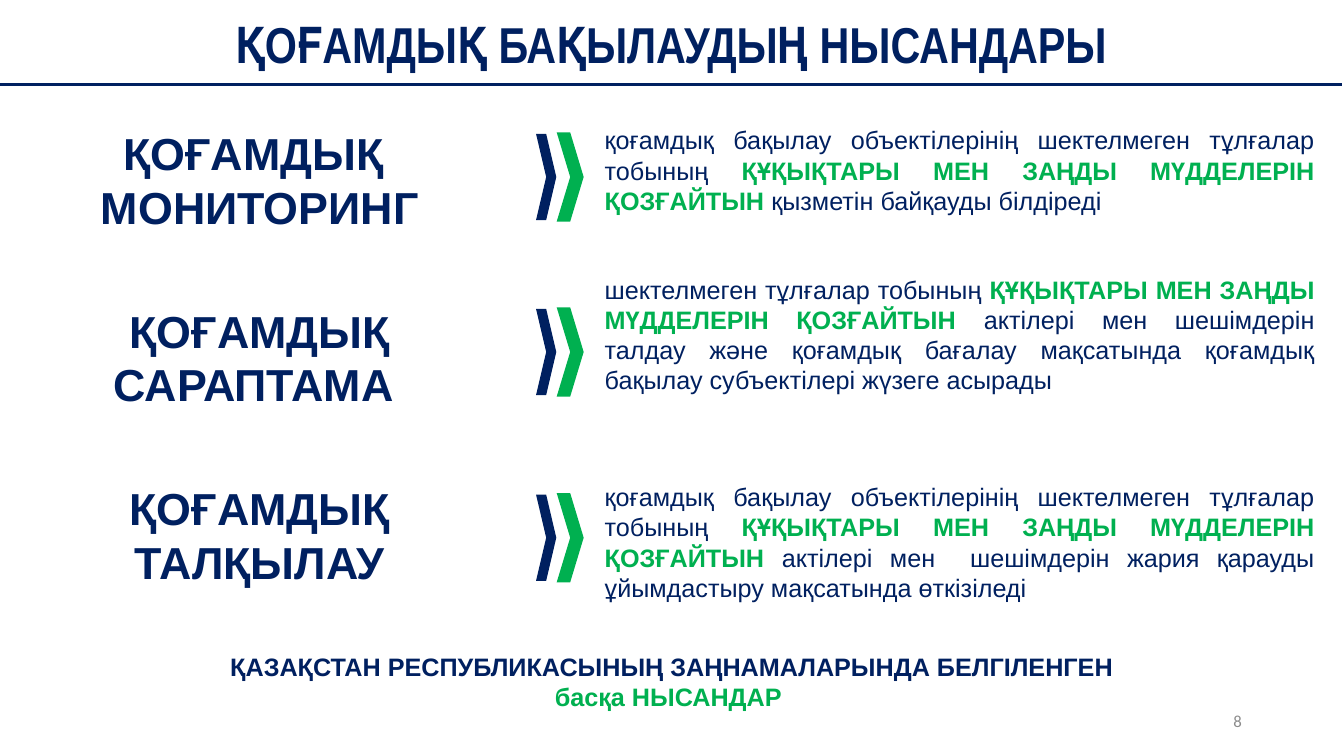
from dataclasses import dataclass

import pptx
import pptx.dml.color
import pptx.enum.shapes
import pptx.enum.text
import pptx.oxml
import pptx.util
from pptx.util import Cm

ALIGN = pptx.enum.text.PP_ALIGN
ANCHOR = pptx.enum.text.MSO_ANCHOR


@dataclass(frozen=True)
class Theme:
    navy: str = "002060"
    green: str = "00B050"
    grey: str = "8C8C8C"
    heading_font: str = "Arial Narrow"
    body_font: str = "Arial"
    number_font: str = "Calibri"
    heading_size: int = 36
    label_size: int = 32
    body_size: int = 18
    number_size: int = 12


def rgb(code):
    return pptx.dml.color.RGBColor.from_string(code)


class Page:
    """One slide together with the theme it is drawn in."""

    def __init__(self, deck, theme):
        self.theme = theme
        self.slide = deck.slides.add_slide(deck.slide_layouts[5])
        self.shapes = self.slide.shapes

    def fill_text(self, box, paragraphs, align, size, font=None, anchor=ANCHOR.TOP):
        """Fill a box; each paragraph is a list of (text, colour, bold)."""
        frame = box.text_frame
        settings = {"word_wrap": True, "vertical_anchor": anchor,
                    "auto_size": pptx.enum.text.MSO_AUTO_SIZE.NONE}
        for name, value in settings.items():
            setattr(frame, name, value)
        for index, pieces in enumerate(paragraphs):
            para = frame.add_paragraph() if index else frame.paragraphs[0]
            para.alignment = align
            for text, colour, bold in pieces:
                span = para.add_run()
                span.text = text
                span.font.color.rgb = rgb(colour)
                formats = {"name": font or self.theme.body_font,
                           "size": pptx.util.Pt(size), "bold": bold}
                for name, value in formats.items():
                    setattr(span.font, name, value)

    def title(self, text, left, top, width, height):
        box = self.shapes.title
        place = {"left": left, "top": top, "width": width, "height": height}
        for name, value in place.items():
            setattr(box, name, Cm(value))
        self.fill_text(box, [[(text, self.theme.navy, True)]], ALIGN.CENTER,
                       self.theme.heading_size, self.theme.heading_font,
                       ANCHOR.MIDDLE)

    def text(self, place, paragraphs, align, size, **options):
        box = self.shapes.add_textbox(*map(Cm, place))
        self.fill_text(box, paragraphs, align, size, **options)

    def rule(self, top, width):
        line = self.shapes.add_connector(
            pptx.enum.shapes.MSO_CONNECTOR.STRAIGHT, 0, Cm(top), Cm(width), Cm(top))
        line.line.color.rgb = rgb(self.theme.navy)
        line.line.width = pptx.util.Pt(2.25)
        line._element.spPr.append(pptx.oxml.parse_xml(
            '<a:effectLst xmlns:a="http://schemas.openxmlformats.org/drawingml/2006/main"/>'))

    def chevron(self, left, middle, width, height, colour):
        """Right-pointing chevron whose arms are half its width thick."""
        half, right = left + width / 2, left + width
        top, bottom = middle - height / 2, middle + height / 2
        corners = [(left, top), (half, top), (right, middle),
                   (half, bottom), (left, bottom), (half, middle)]
        points = [(Cm(x), Cm(y)) for x, y in corners]
        builder = self.shapes.build_freeform(*points[0])
        builder.add_line_segments(points[1:], close=True)
        shape = builder.convert_to_shape()
        shape.shadow.inherit = False
        shape.fill.solid()
        shape.fill.fore_color.rgb = rgb(colour)
        shape.line.fill.background()


RIGHTS = "ҚҰҚЫҚТАРЫ МЕН ЗАҢДЫ МҮДДЕЛЕРІН ҚОЗҒАЙТЫН "
GROUP = "шектелмеген тұлғалар тобының "
OBJECTS = "қоғамдық бақылау объектілерінің " + GROUP

# label, opening, ending, top of description, height, middle of chevrons
FORMS = [
    ("ҚОҒАМДЫҚ  МОНИТОРИНГ", OBJECTS, "қызметін байқауды білдіреді",
     3.02, 2.57, 4.46),
    ("ҚОҒАМДЫҚ САРАПТАМА ", GROUP,
     "актілері мен шешімдерін талдау және қоғамдық бағалау мақсатында "
     "қоғамдық бақылау субъектілері жүзеге асырады",
     6.78, 3.33, 8.87),
    ("ҚОҒАМДЫҚ ТАЛҚЫЛАУ", OBJECTS,
     "актілері мен  шешімдерін жария қарауды ұйымдастыру мақсатында өткізіледі",
     12.01, 3.33, 13.55),
]
LABEL_TOP, LABEL_STEP = 3.02, 4.48


def main():
    deck = pptx.Presentation()
    deck.slide_width, deck.slide_height = Cm(33.87), Cm(19.05)
    theme = Theme()
    page = Page(deck, theme)

    page.title("ҚОҒАМДЫҚ БАҚЫЛАУДЫҢ НЫСАНДАРЫ", 0, 0.2, 33.83, 1.8)
    page.rule(2.13, 33.83)

    for row, (label, opening, ending, top, height, middle) in enumerate(FORMS):
        page.text((1.14, LABEL_TOP + row * LABEL_STEP, 10.82, 3),
                  [[(label, theme.navy, True)]], ALIGN.CENTER,
                  theme.label_size, anchor=ANCHOR.MIDDLE)
        page.text((14.99, top, 18.39, height),
                  [[(opening, theme.navy, False), (RIGHTS, theme.green, True),
                    (ending, theme.navy, False)]],
                  ALIGN.JUSTIFY, theme.body_size)
        page.chevron(13.51, middle, 0.51, 2.17, theme.navy)
        page.chevron(14.03, middle, 0.68, 2.25, theme.green)

    page.text((5.41, 16.28, 23.04, 1.8),
              [[("ҚАЗАҚСТАН РЕСПУБЛИКАСЫНЫҢ ЗАҢНАМАЛАРЫНДА БЕЛГІЛЕНГЕН",
                 theme.navy, True)],
               [("басқа НЫСАНДАР ", theme.green, True)]],
              ALIGN.CENTER, theme.body_size)
    page.text((23.93, 17.65, 7.62, 1.02), [[("8", theme.grey, False)]], ALIGN.RIGHT,
              theme.number_size, font=theme.number_font, anchor=ANCHOR.MIDDLE)

    deck.save("out.pptx")


if __name__ == "__main__":
    main()
